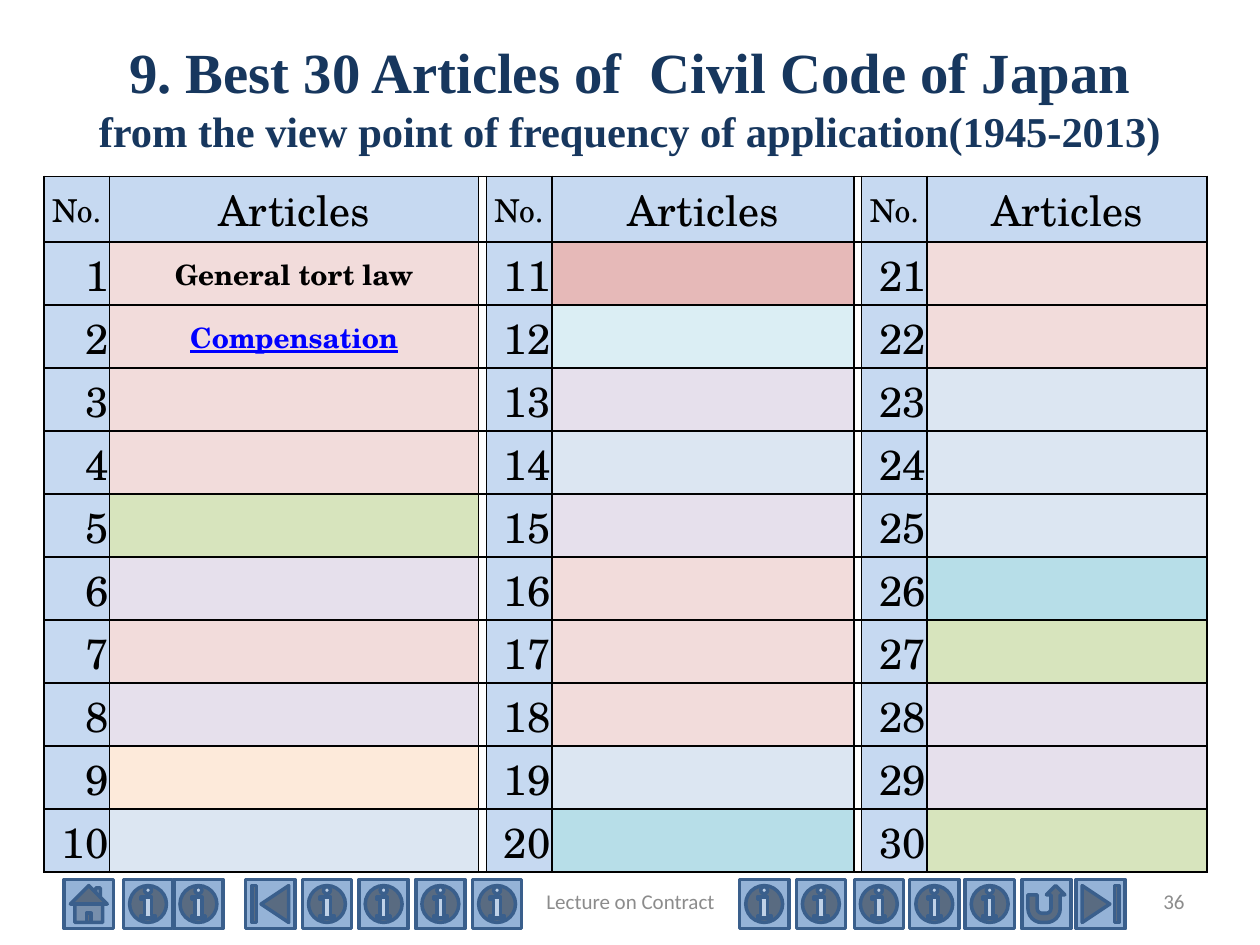
"""Build the slide listing the thirty most applied articles of the Civil Code of Japan."""
from lxml import etree
from pptx import Presentation
from pptx.dml.color import RGBColor
from pptx.enum.shapes import MSO_SHAPE
from pptx.enum.text import MSO_ANCHOR, MSO_AUTO_SIZE, PP_ALIGN
from pptx.oxml.ns import qn
from pptx.util import Inches, Pt

HOME = MSO_SHAPE.ACTION_BUTTON_HOME
FIRST = MSO_SHAPE.ACTION_BUTTON_BEGINNING
LAST = MSO_SHAPE.ACTION_BUTTON_END
RETURN = MSO_SHAPE.ACTION_BUTTON_RETURN
INFO = MSO_SHAPE.ACTION_BUTTON_INFORMATION
LEFT, CENTER, RIGHT = PP_ALIGN.LEFT, PP_ALIGN.CENTER, PP_ALIGN.RIGHT
MIDDLE, BOTTOM = MSO_ANCHOR.MIDDLE, MSO_ANCHOR.BOTTOM

NAVY = RGBColor(0x17, 0x37, 0x5E)
BLACK = RGBColor(0, 0, 0)
WHITE = RGBColor(0xFF, 0xFF, 0xFF)
GRAY = RGBColor(0x8C, 0x8C, 0x8C)
LINK_BLUE = RGBColor(0, 0, 0xFF)
HEADER_BLUE = RGBColor(0xC6, 0xD9, 0xF1)
BUTTON_FILL = RGBColor(0x95, 0xB3, 0xD7)
BUTTON_LINE = RGBColor(0x3A, 0x5F, 0x8C)
PINK = RGBColor(0xF2, 0xDC, 0xDB)
ROSE = RGBColor(0xE6, 0xB9, 0xB8)
GREEN = RGBColor(0xD7, 0xE4, 0xBD)
LILAC = RGBColor(0xE6, 0xE0, 0xEC)
PEACH = RGBColor(0xFD, 0xEA, 0xDA)
ICE = RGBColor(0xDC, 0xE6, 0xF2)
PALE_AQUA = RGBColor(0xDB, 0xEE, 0xF4)
AQUA = RGBColor(0xB7, 0xDE, 0xE8)

TITLE_LINES = [
    ("9. Best 30 Articles of  Civil Code of Japan", 32.4),
    ("from the view point of frequency of application(1945-2013)", 24.3),
]
ARTICLE_NAMES = {1: "General tort law", 2: "Compensation"}
LINKED_ARTICLE = 2
ARTICLE_COLORS = [
    [PINK, PINK, PINK, PINK, GREEN, LILAC, PINK, LILAC, PEACH, ICE],
    [ROSE, PALE_AQUA, LILAC, ICE, LILAC, PINK, PINK, PINK, ICE, AQUA],
    [PINK, PINK, ICE, ICE, ICE, AQUA, GREEN, LILAC, LILAC, GREEN],
]
COLUMN_WIDTHS = [0.52, 2.93, 0.06, 0.52, 2.4, 0.06, 0.52, 2.22]
HEADER_HEIGHT, ROW_HEIGHT = 0.52, 0.5
TABLE_LEFT, TABLE_TOP = 0.35, 1.4
BUTTONS = [
    (HOME, 0.51), (INFO, 0.98), (INFO, 1.38), (FIRST, 1.95), (INFO, 2.4),
    (INFO, 2.85), (INFO, 3.3), (INFO, 3.75), (INFO, 5.87), (INFO, 6.32),
    (INFO, 6.78), (INFO, 7.22), (INFO, 7.66), (RETURN, 8.11), (LAST, 8.54),
]
BUTTON_TOP, BUTTON_SIZE = 6.98, 0.39
FOOTERS = [("Lecture on Contract", 3.42, 3.17, CENTER), ("36", 7.17, 2.33, RIGHT)]
FOOTER_TOP, FOOTER_HEIGHT = 6.95, 0.4


def format_run(run, font_name, size, color, bold=False, underline=False):
    font = run.font
    font.name, font.size, font.bold = font_name, Pt(size), bold
    font.underline = underline
    font.color.rgb = color


def place(shape, left, top, width, height):
    shape.left, shape.top = Inches(left), Inches(top)
    shape.width, shape.height = Inches(width), Inches(height)


def add_title(slide):
    title = slide.shapes.title
    place(title, 0.5, 0.3, 9, 0.93)
    frame = title.text_frame
    frame.text = "\v".join(text for text, _ in TITLE_LINES)
    frame.word_wrap, frame.auto_size = True, MSO_AUTO_SIZE.NONE
    frame.vertical_anchor = MIDDLE
    paragraph = frame.paragraphs[0]
    paragraph.alignment = CENTER
    for run, (_, size) in zip(paragraph.runs, TITLE_LINES):
        format_run(run, "Times New Roman", size, NAVY, bold=True)


def add_buttons(slide):
    for kind, left in BUTTONS:
        button = slide.shapes.add_shape(
            kind, Inches(left), Inches(BUTTON_TOP), Inches(BUTTON_SIZE), Inches(BUTTON_SIZE))
        button.shadow.inherit = False
        button.fill.solid()
        button.fill.fore_color.rgb = BUTTON_FILL
        button.line.color.rgb = BUTTON_LINE
        button.line.width = Pt(2)


def add_footers(slide):
    for text, left, width, alignment in FOOTERS:
        box = slide.shapes.add_textbox(
            Inches(left), Inches(FOOTER_TOP), Inches(width), Inches(FOOTER_HEIGHT))
        frame = box.text_frame
        frame.text = text
        frame.word_wrap, frame.vertical_anchor = True, MIDDLE
        paragraph = frame.paragraphs[0]
        paragraph.alignment = alignment
        format_run(paragraph.runs[0], "Calibri", 12, GRAY)


def style_cell(cell, color):
    properties = cell._tc.get_or_add_tcPr()
    for side in ("lnL", "lnR", "lnT", "lnB"):
        border = etree.SubElement(properties, qn(f"a:{side}"), w=str(Pt(1)))
        fill = etree.SubElement(border, qn("a:solidFill"))
        etree.SubElement(fill, qn("a:srgbClr"), val=str(BLACK))
    cell.fill.solid()
    cell.fill.fore_color.rgb = color
    cell.margin_left = cell.margin_right = cell.margin_top = Inches(0.01)
    cell.margin_bottom = 0


def write_cell(cell, text, size, alignment=CENTER, anchor=MIDDLE, color=BLACK, **emphasis):
    cell.text = text
    cell.vertical_anchor = anchor
    paragraph = cell.text_frame.paragraphs[0]
    paragraph.alignment = alignment
    format_run(paragraph.runs[0], "TeX Gyre Schola", size, color, **emphasis)


def add_article_table(slide):
    heights = [HEADER_HEIGHT] + [ROW_HEIGHT] * len(ARTICLE_COLORS[0])
    table = slide.shapes.add_table(
        len(heights), len(COLUMN_WIDTHS), Inches(TABLE_LEFT), Inches(TABLE_TOP),
        Inches(sum(COLUMN_WIDTHS)), Inches(sum(heights))).table
    table.first_row = table.horz_banding = False
    for column, width in zip(table.columns, COLUMN_WIDTHS):
        column.width = Inches(width)
    for row, height in zip(table.rows, heights):
        row.height = Inches(height)

    for row_index in range(len(heights)):
        for column_index in range(len(COLUMN_WIDTHS)):
            group, part = divmod(column_index, 3)
            article_color = ARTICLE_COLORS[group][row_index - 1] if row_index else HEADER_BLUE
            color = (HEADER_BLUE, article_color, WHITE)[part]
            style_cell(table.cell(row_index, column_index), color)

    for group, colors in enumerate(ARTICLE_COLORS):
        number_column = group * 3
        write_cell(table.cell(0, number_column), "No.", 18)
        write_cell(table.cell(0, number_column + 1), "Articles", 24)
        for row_index in range(1, len(colors) + 1):
            number = group * len(colors) + row_index
            write_cell(table.cell(row_index, number_column), str(number), 24, RIGHT, BOTTOM)
            if number in ARTICLE_NAMES:
                linked = number == LINKED_ARTICLE
                write_cell(table.cell(row_index, number_column + 1), ARTICLE_NAMES[number], 16,
                           color=LINK_BLUE if linked else BLACK, bold=True, underline=linked)


def main():
    presentation = Presentation()
    presentation.slide_width, presentation.slide_height = Inches(10), Inches(7.5)
    slide = presentation.slides.add_slide(presentation.slide_layouts[5])
    add_buttons(slide)
    add_title(slide)
    add_article_table(slide)
    add_footers(slide)
    presentation.save("out.pptx")


if __name__ == "__main__":
    main()
